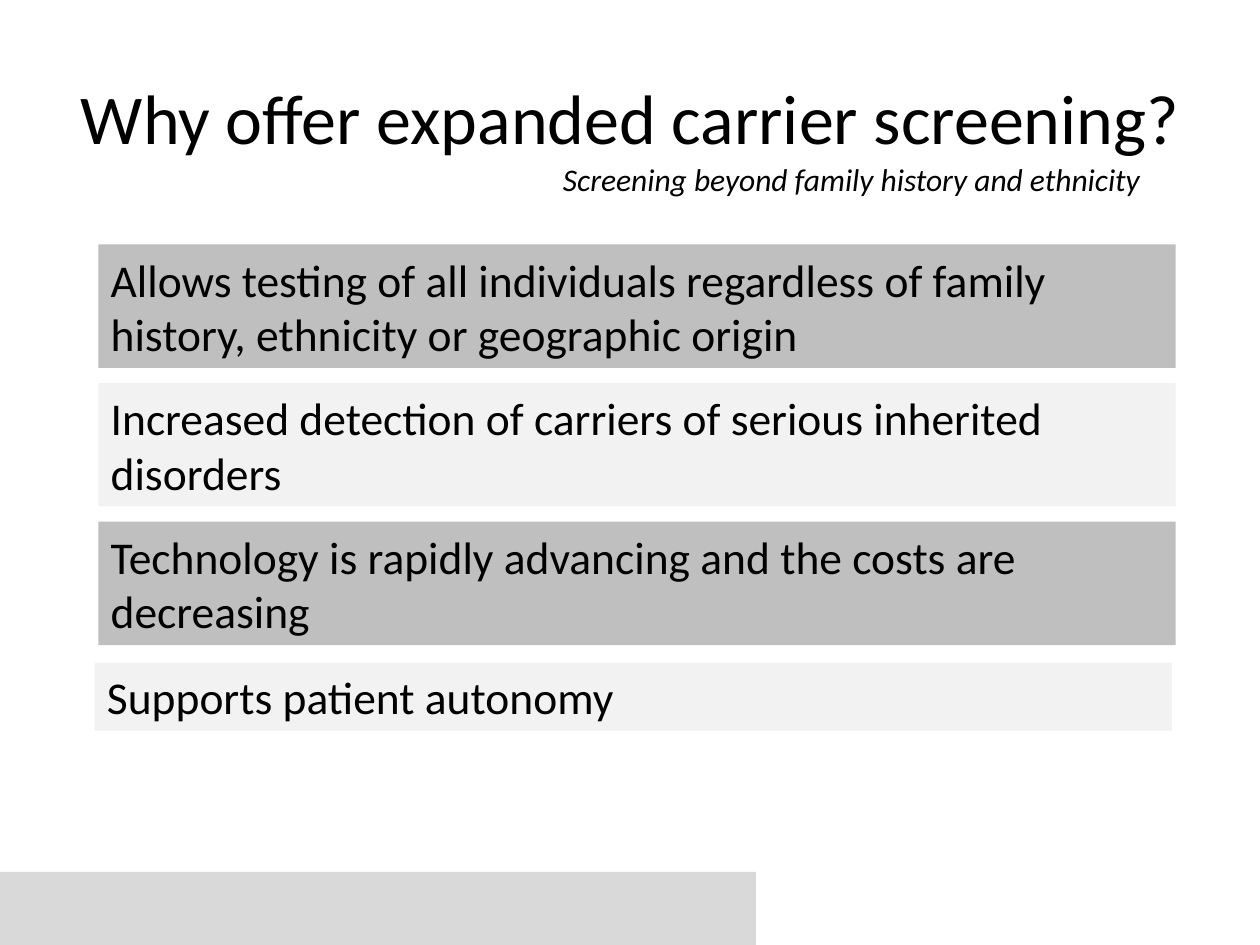
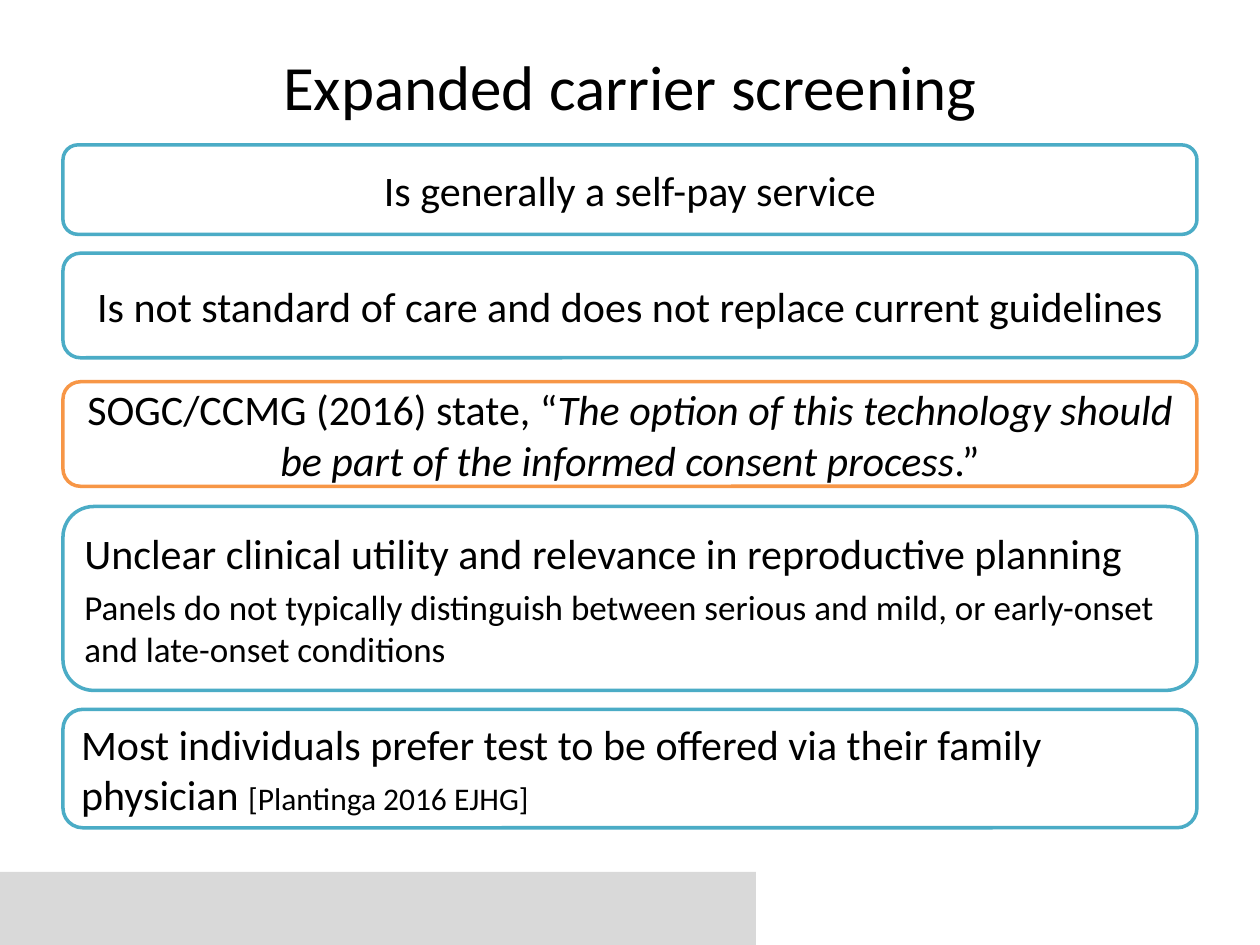
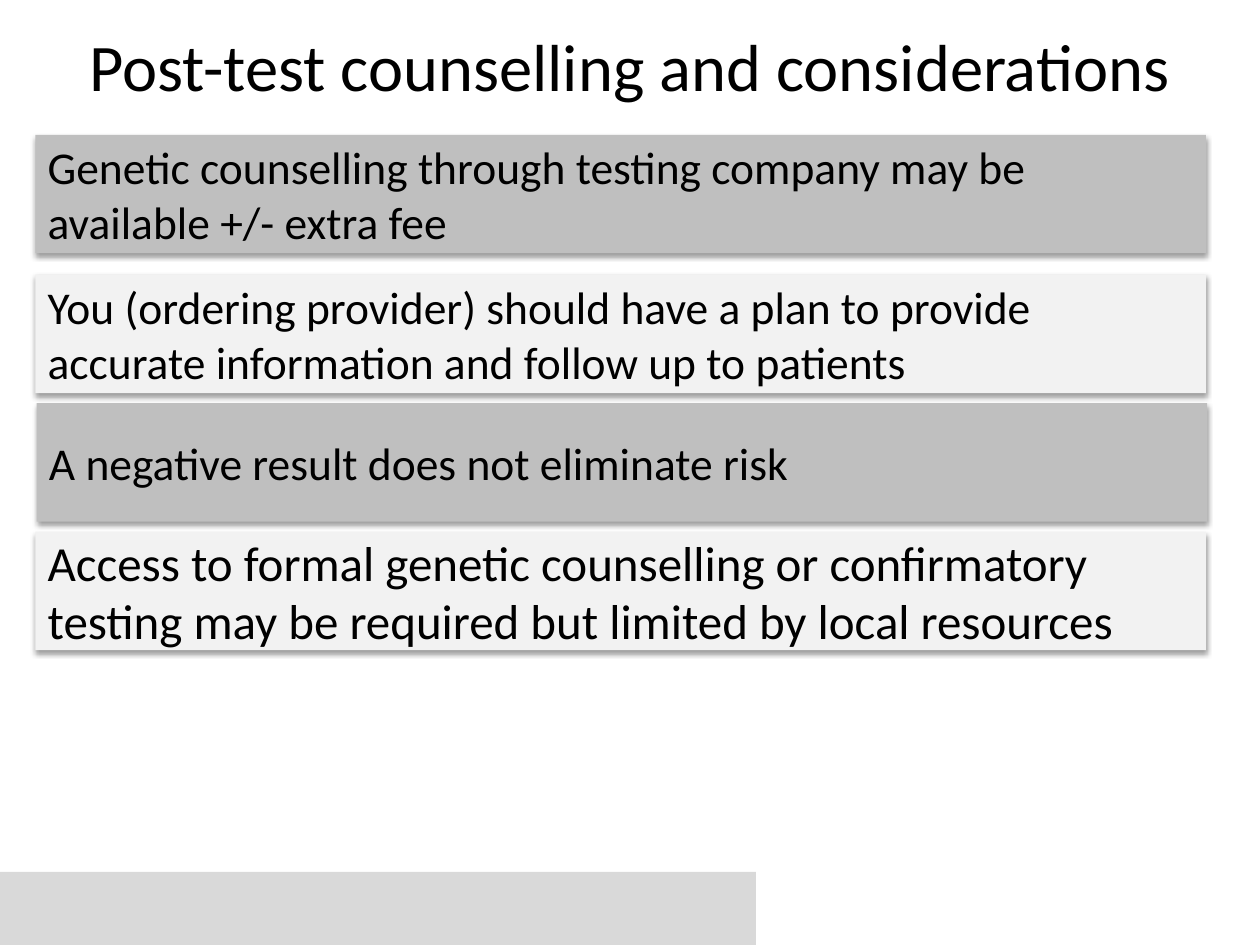
from lxml import etree
from pptx import Presentation
from pptx.dml.color import RGBColor
from pptx.enum.shapes import MSO_SHAPE
from pptx.enum.text import MSO_ANCHOR, PP_ALIGN
from pptx.oxml.ns import qn
from pptx.util import Inches, Pt

RECTANGLE = MSO_SHAPE.RECTANGLE
ROUNDED = MSO_SHAPE.ROUNDED_RECTANGLE
MIDDLE = MSO_ANCHOR.MIDDLE
TOP = MSO_ANCHOR.TOP
LEFT = PP_ALIGN.LEFT
CENTER = PP_ALIGN.CENTER

FONT = "Calibri"
BLACK = "000000"
WHITE = "FFFFFF"
FOOTER_GREY = "D9D9D9"
BAR_COLORS = ("BFBFBF", "F2F2F2")
TEAL = "4BACC6"
ORANGE = "F79646"


def rgb(color):
    """Turn a hex string into a colour."""
    return RGBColor.from_string(color)


def write_text(shape, paragraphs, align=LEFT, anchor=MIDDLE):
    """Fill a shape with paragraphs made of (text, size, italic) runs."""
    frame = shape.text_frame
    frame.word_wrap = True
    frame.vertical_anchor = anchor
    for index, runs in enumerate(paragraphs):
        paragraph = frame.add_paragraph() if index else frame.paragraphs[0]
        paragraph.alignment = align
        if index:
            paragraph.space_before = Pt(4)
        for text, size, italic in runs:
            run = paragraph.add_run()
            run.text = text
            run.font.name = FONT
            run.font.size = Pt(size)
            run.font.italic = italic
            run.font.color.rgb = rgb(BLACK)


def add_box(slide, preset, box, fill, line=None):
    """Add a flat filled shape with an optional outline."""
    shape = slide.shapes.add_shape(preset, *map(Inches, box))
    shape.shadow.inherit = False
    shape.fill.solid()
    shape.fill.fore_color.rgb = rgb(fill)
    if line:
        shape.line.color.rgb = rgb(line)
        shape.line.width = Pt(2)
    else:
        shape.line.fill.background()
    return shape


def add_shadow(shape):
    """Cast a soft shadow straight below a shape."""
    effects = shape.element.spPr.find(qn("a:effectLst"))
    shadow = etree.SubElement(
        effects, qn("a:outerShdw"), blurRad=str(Pt(3.1)), dist=str(Pt(1.6)),
        dir="5400000", rotWithShape="0")
    color = etree.SubElement(shadow, qn("a:srgbClr"), val=BLACK)
    etree.SubElement(color, qn("a:alpha"), val="38000")


def add_label(slide, box, text, size, italic=False, align=LEFT, anchor=TOP):
    """Add a one-run text box."""
    label = slide.shapes.add_textbox(*map(Inches, box))
    write_text(label, [[(text, size, italic)]], align, anchor)


def start_slide(presentation, title, size, title_top):
    """Add a slide with the footer band and a centred title."""
    slide = presentation.slides.add_slide(presentation.slide_layouts[6])
    add_box(slide, RECTANGLE, (0, 6.92, 6, 0.58), FOOTER_GREY)
    add_label(slide, (0.5, title_top, 9, 1.25), title, size,
              align=CENTER, anchor=MIDDLE)
    return slide


def add_bars(slide, width, bars, shadow=False):
    """Add bars of alternating greys from (left, top, height, text, size) rows."""
    for index, (left, top, height, text, size) in enumerate(bars):
        fill = BAR_COLORS[index % len(BAR_COLORS)]
        bar = add_box(slide, RECTANGLE, (left, top, width, height), fill)
        write_text(bar, [[(text, size, False)]])
        if shadow:
            add_shadow(bar)


def add_statements(slide, left, width, statements):
    """Add outlined boxes from (top, height, line, align, paragraphs) rows."""
    for top, height, line, align, paragraphs in statements:
        box = (left, top, width, height)
        write_text(add_box(slide, ROUNDED, box, WHITE, line), paragraphs, align)


def build_reasons(presentation):
    """Build the slide on why to offer screening."""
    slide = start_slide(presentation, "Why offer expanded carrier screening?", 40, 0.3)
    add_label(slide, (4.37, 1.22, 4.96, 0.4),
              "Screening beyond family history and ethnicity", 18, italic=True)
    add_bars(slide, 8.55, [
        (0.78, 1.94, 0.98, "Allows testing of all individuals regardless of family "
         "history, ethnicity or geographic origin", 26),
        (0.78, 3.04, 0.98, "Increased detection of carriers of serious inherited "
         "disorders", 26),
        (0.78, 4.14, 0.98, "Technology is rapidly advancing and the costs are "
         "decreasing", 26),
        (0.75, 5.26, 0.54, "Supports patient autonomy", 26),
    ])


def build_facts(presentation):
    """Build the slide of facts about expanded screening."""
    slide = start_slide(presentation, "Expanded carrier screening", 36, 0.05)
    add_statements(slide, 0.5, 9, [
        (1.15, 0.71, TEAL, CENTER, [[("Is generally a self-pay service", 24, False)]]),
        (2.01, 0.83, TEAL, CENTER, [[
            ("Is not standard of care and does not replace current guidelines",
             24, False)]]),
        (3.03, 0.83, ORANGE, CENTER, [[
            ("SOGC/CCMG (2016) state, “", 24, False),
            ("The option of this technology should be part of the informed "
             "consent process", 24, True),
            (".”", 24, False)]]),
        (4.02, 1.46, TEAL, LEFT, [
            [("Unclear clinical utility and relevance in reproductive planning",
              24, False)],
            [("Panels do not typically distinguish between serious and mild, or "
              "early-onset and late-onset conditions", 20, False)]]),
        (5.63, 0.94, TEAL, LEFT, [[
            ("Most individuals prefer test to be offered via their family "
             "physician ", 24, False),
            ("[Plantinga 2016 EJHG]", 18, False)]]),
    ])


def build_counselling(presentation):
    """Build the slide on counselling after the test."""
    slide = start_slide(
        presentation, "Post-test counselling and considerations", 38, -0.11)
    add_bars(slide, 9.29, [
        (0.28, 1.07, 0.94, "Genetic counselling through testing company may be "
         "available +/- extra fee", 26),
        (0.28, 2.18, 0.94, "You (ordering provider) should have a plan to provide "
         "accurate information and follow up to patients", 26),
        (0.29, 3.2, 0.94, "A negative result does not eliminate risk", 26),
        (0.28, 4.22, 0.94, "Access to formal genetic counselling or confirmatory "
         "testing may be required but limited by local resources", 28),
    ], shadow=True)


def main():
    """Build and save the presentation."""
    presentation = Presentation()
    presentation.slide_width = Inches(10)
    presentation.slide_height = Inches(7.5)
    build_reasons(presentation)
    build_facts(presentation)
    build_counselling(presentation)
    presentation.save("out.pptx")


if __name__ == "__main__":
    main()
